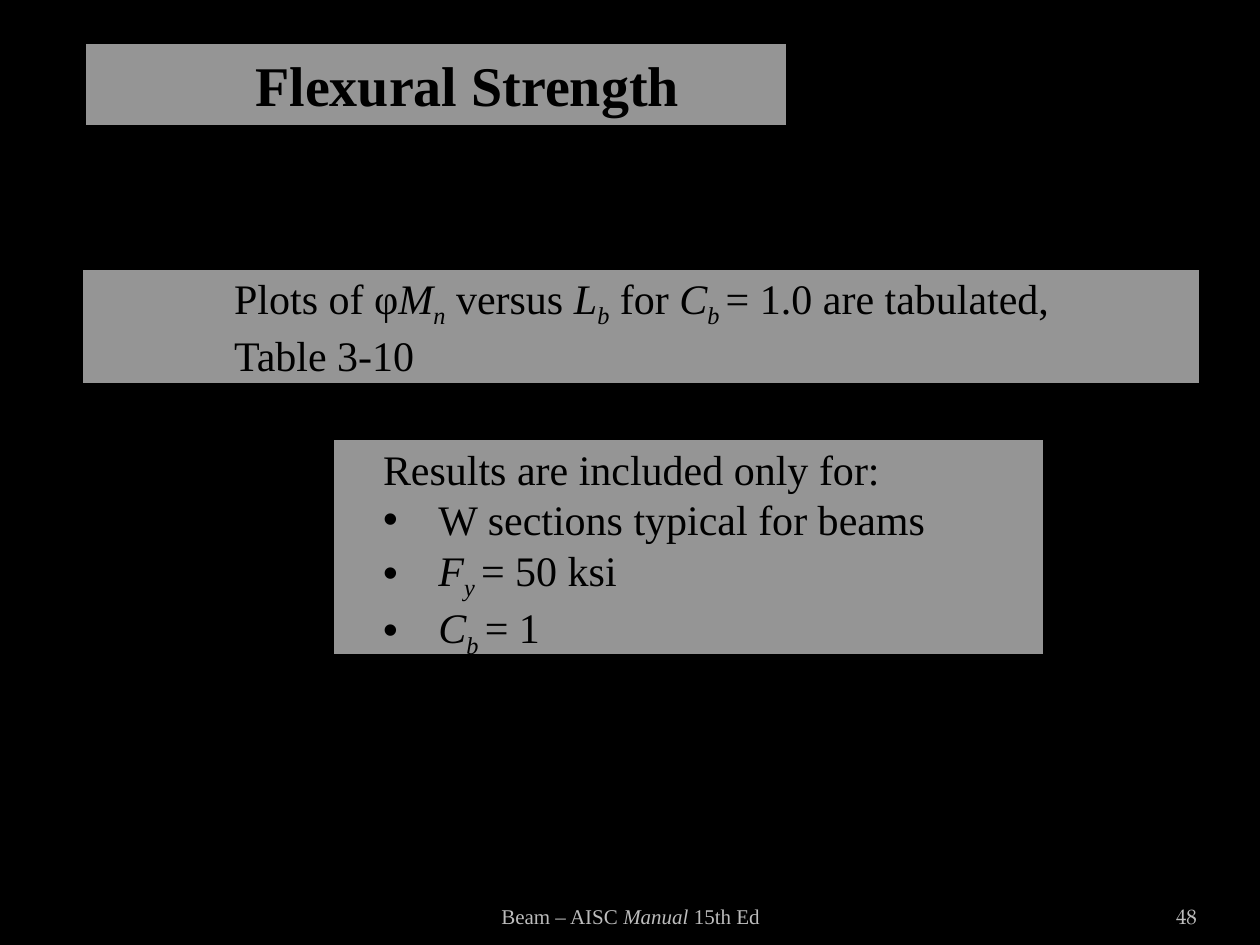
import pptx
import pptx.dml.color
import pptx.enum.shapes
import pptx.enum.text
import pptx.oxml.ns
import pptx.util
from lxml import etree

Inches = pptx.util.Inches
Pt = pptx.util.Pt
RGBColor = pptx.dml.color.RGBColor
Align = pptx.enum.text.PP_ALIGN
Anchor = pptx.enum.text.MSO_ANCHOR
qn = pptx.oxml.ns.qn

BLACK = RGBColor(0x00, 0x00, 0x00)
PANEL = RGBColor(0xF2, 0xF2, 0xF2)
FOOTER_GRAY = RGBColor(0xBC, 0xBC, 0xBC)
NUMBER_GRAY = RGBColor(0xBD, 0xBD, 0xBD)
PANEL_OPACITY = 62
SERIF = "Times New Roman"
PLAIN, ITALIC, SUBSCRIPT = range(3)


def place(shape, box):
    shape.left, shape.top, shape.width, shape.height = [Inches(value) for value in box]


def style_panel(shape, anchor):
    shape.fill.solid()
    shape.fill.fore_color.rgb = PANEL
    color = shape.fill._xPr.find(".//" + qn("a:srgbClr"))
    etree.SubElement(color, qn("a:alpha"), val=str(PANEL_OPACITY * 1000))
    shape.line.color.rgb = BLACK
    shape.line.width = Pt(3)
    frame = shape.text_frame
    frame.auto_size = pptx.enum.text.MSO_AUTO_SIZE.NONE
    frame.vertical_anchor = anchor
    frame.word_wrap = True


def set_indent(paragraph, margin, indent, bullet=None):
    properties = paragraph._p.get_or_add_pPr()
    properties.set("marL", str(Inches(margin)))
    properties.set("indent", str(Inches(indent)))
    if bullet:
        etree.SubElement(properties, qn("a:buChar"), char=bullet)
    else:
        etree.SubElement(properties, qn("a:buNone"))


def write(paragraph, runs, size, color=BLACK, align=Align.LEFT, font=SERIF, bold=False):
    paragraph.alignment = align
    paragraph.space_before = Pt(0)
    paragraph.font.name = font
    paragraph.font.size = Pt(size)
    paragraph.font.color.rgb = color
    paragraph.font.bold = bold
    for text, style in runs:
        run = paragraph.add_run()
        run.text = text
        if style != PLAIN:
            run.font.italic = True
        if style == SUBSCRIPT:
            run.font._element.set("baseline", "-25000")


def add_title(slide, box):
    title = slide.shapes.title
    place(title, box)
    style_panel(title, Anchor.MIDDLE)
    paragraph = title.text_frame.paragraphs[0]
    set_indent(paragraph, 0.5, 0)
    write(paragraph, [("Flexural Strength", PLAIN)], 32, align=Align.CENTER, bold=True)


def add_statement(slide, box):
    shape = slide.shapes.add_shape(
        pptx.enum.shapes.MSO_SHAPE.RECTANGLE, *[Inches(value) for value in box])
    shape.shadow.inherit = False
    style_panel(shape, Anchor.MIDDLE)
    frame = shape.text_frame
    lines = [
        [("Plots of φ", PLAIN), ("M", ITALIC), ("n", SUBSCRIPT),
         (" versus ", PLAIN), ("L", ITALIC), ("b", SUBSCRIPT),
         (" for ", PLAIN), ("C", ITALIC), ("b ", SUBSCRIPT),
         ("= 1.0 are tabulated,", PLAIN)],
        [("Table 3-10", PLAIN)],
    ]
    for index, runs in enumerate(lines):
        paragraph = frame.add_paragraph() if index else frame.paragraphs[0]
        set_indent(paragraph, 1.12, 0)
        write(paragraph, runs, 24)


def add_results(slide, box):
    body = slide.placeholders[1]
    place(body, box)
    style_panel(body, Anchor.TOP)
    frame = body.text_frame
    heading = frame.paragraphs[0]
    set_indent(heading, 0.75, -0.44)
    write(heading, [("Results are included only for:", PLAIN)], 24)
    conditions = [
        [("W sections typical for beams", PLAIN)],
        [("F", ITALIC), ("y ", SUBSCRIPT), ("= 50 ksi", PLAIN)],
        [("C", ITALIC), ("b ", SUBSCRIPT), ("= 1", PLAIN)],
    ]
    for runs in conditions:
        paragraph = frame.add_paragraph()
        set_indent(paragraph, 0.75, -0.44, "•")
        write(paragraph, runs, 24)


def add_footer_text(slide, box, runs, color, align, font, side_margin):
    frame = slide.shapes.add_textbox(*[Inches(value) for value in box]).text_frame
    frame.word_wrap = True
    frame.vertical_anchor = Anchor.BOTTOM
    frame.margin_left = frame.margin_right = Inches(side_margin)
    write(frame.paragraphs[0], runs, 12, color, align, font)


def main():
    presentation = pptx.Presentation()
    presentation.slide_width = Inches(10)
    presentation.slide_height = Inches(7.5)
    slide = presentation.slides.add_slide(presentation.slide_layouts[1])
    slide.background.fill.solid()
    slide.background.fill.fore_color.rgb = BLACK
    add_title(slide, (0.66, 0.33, 5.6, 0.68))
    add_statement(slide, (0.64, 2.12, 8.9, 0.94))
    add_results(slide, (2.63, 3.47, 5.67, 1.74))
    add_footer_text(
        slide, (3.42, 7.02, 3.17, 0.4),
        [("Beam – AISC ", PLAIN), ("Manual", ITALIC), (" 15th Ed", PLAIN)],
        FOOTER_GRAY, Align.CENTER, SERIF, 0.1)
    add_footer_text(
        slide, (8.67, 7.02, 0.83, 0.4), [("48", PLAIN)],
        NUMBER_GRAY, Align.RIGHT, "TeX Gyre Pagella", 0)
    presentation.save("out.pptx")


if __name__ == "__main__":
    main()
